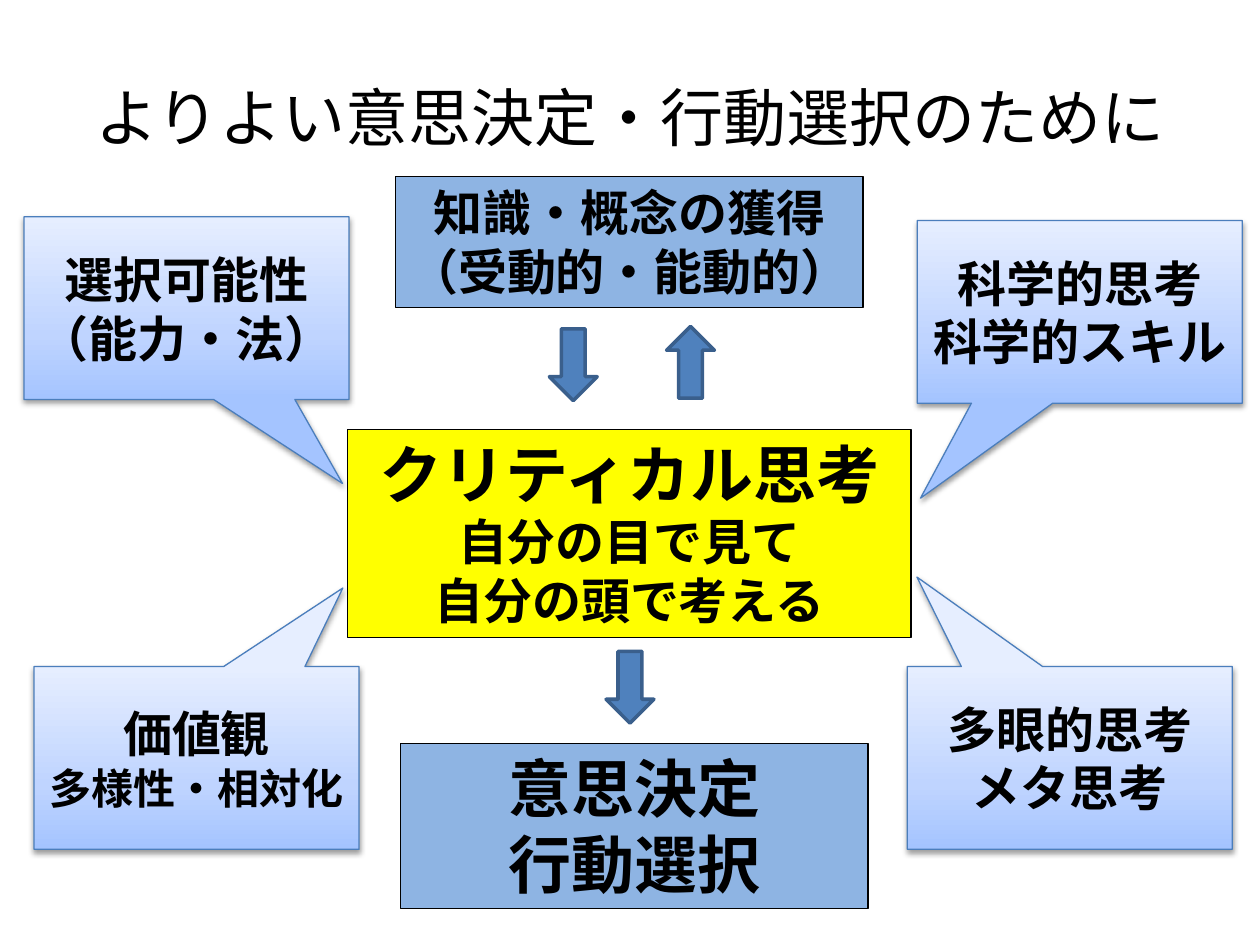
import pptx
import pptx.util
import pptx.dml.color
import pptx.enum.shapes
import pptx.enum.text
import pptx.oxml
import pptx.oxml.ns

THEME = {
    "black": "000000", "blue": "8EB4E3", "yellow": "FFFF00",
    "arrow": "4F81BD", "arrow_line": "3A5F8C", "callout_line": "4B7EBC",
    "gradient": [(0, "A4C4FF"), (35, "BFD4FF"), (100, "E6EEFF")],
    "font": "Cabin", "callout_font": "Noto Sans CJK JP",
    "large": 36, "medium": 28, "small": 24,
}
SHAPE = pptx.enum.shapes.MSO_SHAPE
ANCHOR = pptx.enum.text.MSO_ANCHOR
NS = 'xmlns:a="http://schemas.openxmlformats.org/drawingml/2006/main"'

prs = pptx.Presentation()
prs.slide_width = pptx.util.Inches(10)
prs.slide_height = pptx.util.Inches(7.5)
COL, ROW = prs.slide_width / 100, prs.slide_height / 75
s = prs.slides.add_slide(prs.slide_layouts[5])


def write(sp, lines, font=THEME["font"], bold=True, anchor=ANCHOR.TOP):
    """Fill a shape with centred (text, size) lines."""
    tf = sp.text_frame
    tf.word_wrap = True
    tf.vertical_anchor = anchor
    for i, (text, size) in enumerate(lines):
        p = tf.paragraphs[0] if i == 0 else tf.add_paragraph()
        p.alignment = pptx.enum.text.PP_ALIGN.CENTER
        r = p.add_run()
        r.text = text
        r.font.size = pptx.util.Pt(THEME[size])
        r.font.bold = bold
        r.font.name = font
        r.font.color.rgb = pptx.dml.color.RGBColor.from_string(THEME["black"])
        r.font._element.append(pptx.oxml.parse_xml(f'<a:ea {NS} typeface="{font}"/>'))


def add_box(kind, col, row, cols, rows, fill, line, width=0.75):
    """Add a shape placed on the grid, without a shadow."""
    sp = s.shapes.add_shape(kind, round(col * COL), round(row * ROW),
                            round(cols * COL), round(rows * ROW))
    sp.shadow.inherit = False
    sp.fill.solid()
    sp.fill.fore_color.rgb = pptx.dml.color.RGBColor.from_string(THEME[fill])
    sp.line.color.rgb = pptx.dml.color.RGBColor.from_string(THEME[line])
    sp.line.width = pptx.util.Pt(width)
    return sp


title = s.shapes.title
title.left, title.top = round(5 * COL), round(3 * ROW)
title.width, title.height = round(90 * COL), round(12.5 * ROW)
write(title, [("よりよい意思決定・行動選択のために", "large")], bold=False, anchor=ANCHOR.MIDDLE)

# Central flow, from knowledge to decision
for col, row, cols, rows, fill, lines in [
    (31.8, 59, 37.1, 13.1, "blue", [("意思決定", "large"), ("行動選択", "large")]),
    (31.4, 14, 37.1, 10.4, "blue",
     [("知識・概念の獲得", "medium"), ("（受動的・能動的）", "medium")]),
    (27.6, 34.1, 44.7, 16.5, "yellow",
     [("クリティカル思考", "large"), ("自分の目で見て", "medium"),
      ("自分の頭で考える", "medium")]),
]:
    write(add_box(SHAPE.RECTANGLE, col, row, cols, rows, fill, "black"), lines)

for kind, col, row in [(SHAPE.DOWN_ARROW, 48.1, 51.7),
                       (SHAPE.DOWN_ARROW, 43.6, 26.1),
                       (SHAPE.UP_ARROW, 52.9, 25.9)]:
    add_box(kind, col, row, 3.8, 5.7, "arrow", "arrow_line", width=2)

# Callouts pointing at critical thinking
stops = "".join(f'<a:gs pos="{pos * 1000}"><a:srgbClr val="{rgb}"/></a:gs>'
                for pos, rgb in THEME["gradient"])
GRADIENT = (f'<a:gradFill {NS} rotWithShape="1"><a:gsLst>{stops}</a:gsLst>'
            '<a:lin ang="16200000" scaled="0"/></a:gradFill>')
SHADOW = (f'<a:outerShdw {NS} blurRad="40000" dist="20000" dir="5400000" rotWithShape="0">'
          f'<a:srgbClr val="{THEME["black"]}"><a:alpha val="38000"/></a:srgbClr></a:outerShdw>')
for col, row, tip, lines in [
    (1.9, 17.2, (0.48, 0.96), [("選択可能性", "medium"), ("（能力・法）", "medium")]),
    (72.8, 17.5, (-0.49, 1.02), [("科学的思考", "medium"), ("科学的スキル", "medium")]),
    (2.7, 52.9, (0.45, -0.93), [("価値観", "medium"), ("多様性・相対化", "small")]),
    (72, 52.9, (-0.47, -0.99), [("多眼的思考", "medium"), ("メタ思考", "medium")]),
]:
    sp = add_box(SHAPE.RECTANGULAR_CALLOUT, col, row, 25.8, 14.5, "blue", "callout_line")
    sp.adjustments[0], sp.adjustments[1] = tip
    props = sp._element.spPr
    props.replace(props.find(pptx.oxml.ns.qn("a:solidFill")), pptx.oxml.parse_xml(GRADIENT))
    props.find(pptx.oxml.ns.qn("a:effectLst")).append(pptx.oxml.parse_xml(SHADOW))
    write(sp, lines, font=THEME["callout_font"], anchor=ANCHOR.MIDDLE)

prs.save("out.pptx")
